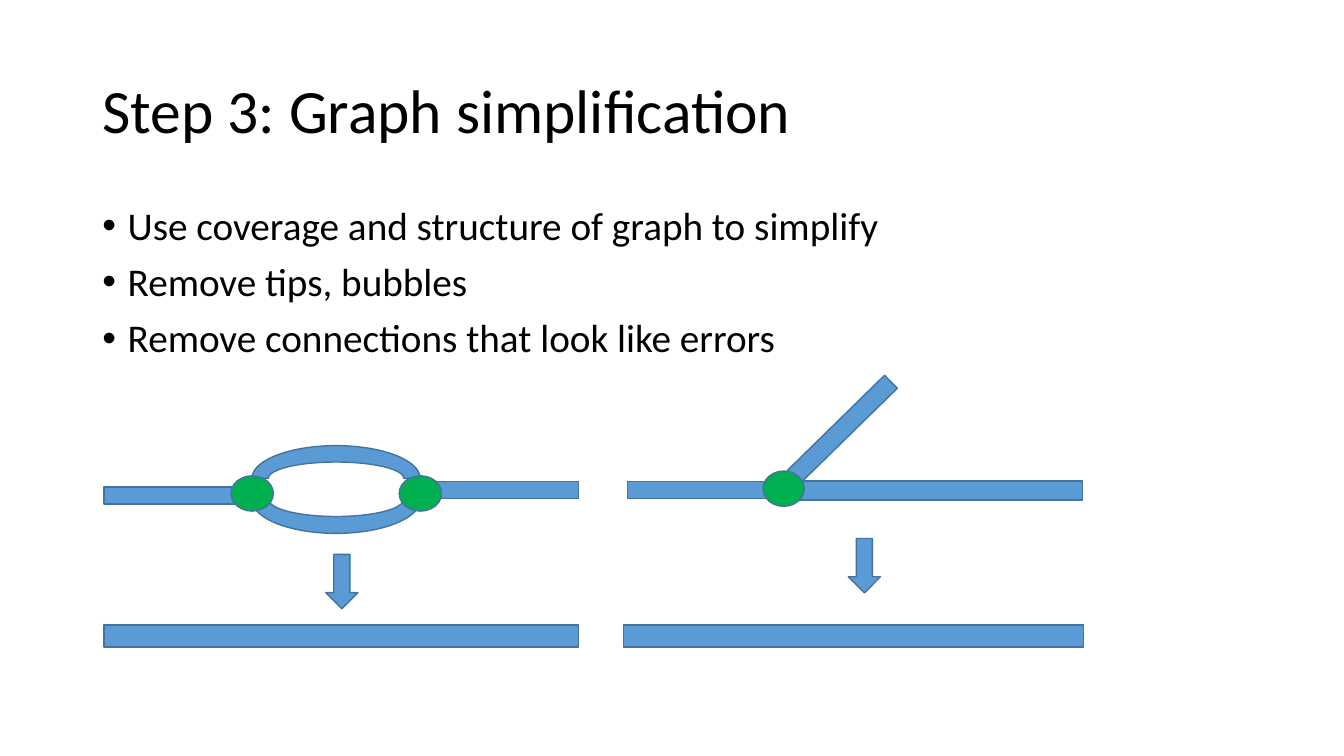
from collections import namedtuple
from dataclasses import dataclass

from lxml.etree import SubElement
from pptx import Presentation
from pptx.dml.color import RGBColor
from pptx.enum.shapes import MSO_SHAPE as Shape
from pptx.enum.text import MSO_ANCHOR as Anchor
from pptx.oxml.ns import qn
from pptx.util import Cm, Pt

Box = namedtuple("Box", "left top width height")


@dataclass(frozen=True)
class Theme:
    font: str = "Calibri"
    title_size: int = 44
    body_size: int = 28
    text: str = "000000"
    strand: str = "5B9BD5"
    node: str = "00B050"
    outline: str = "43739E"
    bar: float = 0.43
    result_bar: float = 0.56


THEME = Theme()


def add_part(page, box, kind, left, top, width, height, fill=THEME.strand, rotation=0):
    """Place an outlined shape, in centimetres from the corner of the box."""
    part = page.shapes.add_shape(
        kind, Cm(box.left + left), Cm(box.top + top), Cm(width), Cm(height))
    part.shadow.inherit = False
    part.fill.solid()
    part.fill.fore_color.rgb = RGBColor.from_string(fill)
    part.line.color.rgb = RGBColor.from_string(THEME.outline)
    part.line.width = Pt(1)
    part.rotation = rotation


def add_frame(page, box, anchor):
    frame = page.shapes.add_textbox(*map(Cm, box)).text_frame
    frame.word_wrap = True
    frame.vertical_anchor = anchor
    return frame


def add_words(para, words, size):
    para.line_spacing = 0.9
    span = para.add_run()
    span.text = words
    span.font.name = THEME.font
    span.font.size = Pt(size)
    span.font.color.rgb = RGBColor.from_string(THEME.text)


def add_title(page, box, words):
    frame = add_frame(page, box, Anchor.MIDDLE)
    add_words(frame.paragraphs[0], words, THEME.title_size)


def add_bullets(page, box, lines):
    frame = add_frame(page, box, Anchor.TOP)
    for index, words in enumerate(lines):
        para = frame.add_paragraph() if index else frame.paragraphs[0]
        add_words(para, words, THEME.body_size)
        para.space_before = Pt(10)
        properties = para._p.get_or_add_pPr()
        properties.set("marL", str(Cm(0.64)))
        properties.set("indent", str(-Cm(0.64)))
        SubElement(properties, qn("a:buFont"), typeface="Arial")
        SubElement(properties, qn("a:buChar"), char="•")


def add_result(page, box, arrow_left, arrow_top):
    """Draw the simplified strand at the foot of the box and the arrow to it."""
    add_part(page, box, Shape.RECTANGLE, 0, box.height - THEME.result_bar,
             box.width, THEME.result_bar)
    add_part(page, box, Shape.DOWN_ARROW, arrow_left, arrow_top, 0.81, 1.37)


def add_bubble(page, box):
    bar_width = 3.84
    add_part(page, box, Shape.RECTANGLE, box.width - bar_width, 0.91, bar_width, THEME.bar)
    add_part(page, box, Shape.RECTANGLE, 0, 1.04, bar_width, THEME.bar)
    for top, height, rotation in ((0, 1.65, 0), (0.51, 1.7, 180)):
        add_part(page, box, Shape.BLOCK_ARC, 3.73, top, 4.24, height, rotation=rotation)
    for left in (7.44, 3.2):
        add_part(page, box, Shape.OVAL, left, 0.76, 1.07, 0.89, THEME.node)
    add_result(page, box, 5.59, 2.74)


def add_tip(page, box):
    add_part(page, box, Shape.RECTANGLE, 0.1, 0.91, 3.84, THEME.bar)
    add_part(page, box, Shape.RECTANGLE, 3.4, -0.48, 3.89, 0.46, rotation=315.6)
    add_part(page, box, Shape.RECTANGLE, 3.96, 0.89, 7.6, 0.48)
    add_part(page, box, Shape.OVAL, 3.51, 0.64, 1.04, 0.89, THEME.node)
    add_result(page, box, 5.66, 2.34)


def main():
    deck = Presentation()
    deck.slide_width, deck.slide_height = Cm(33.87), Cm(19.05)
    page = deck.slides.add_slide(deck.slide_layouts[6])
    add_title(page, Box(2.33, 1.01, 29.21, 3.68), "Step 3: Graph simplification")
    add_bullets(page, Box(2.33, 5.07, 29.21, 12.09), (
        "Use coverage and structure of graph to simplify",
        "Remove tips, bubbles",
        "Remove connections that look like errors",
    ))
    add_bubble(page, Box(2.62, 11.23, 11.96, 5.08))
    add_tip(page, Box(15.72, 11.23, 11.58, 5.08))
    deck.save("out.pptx")


if __name__ == "__main__":
    main()
